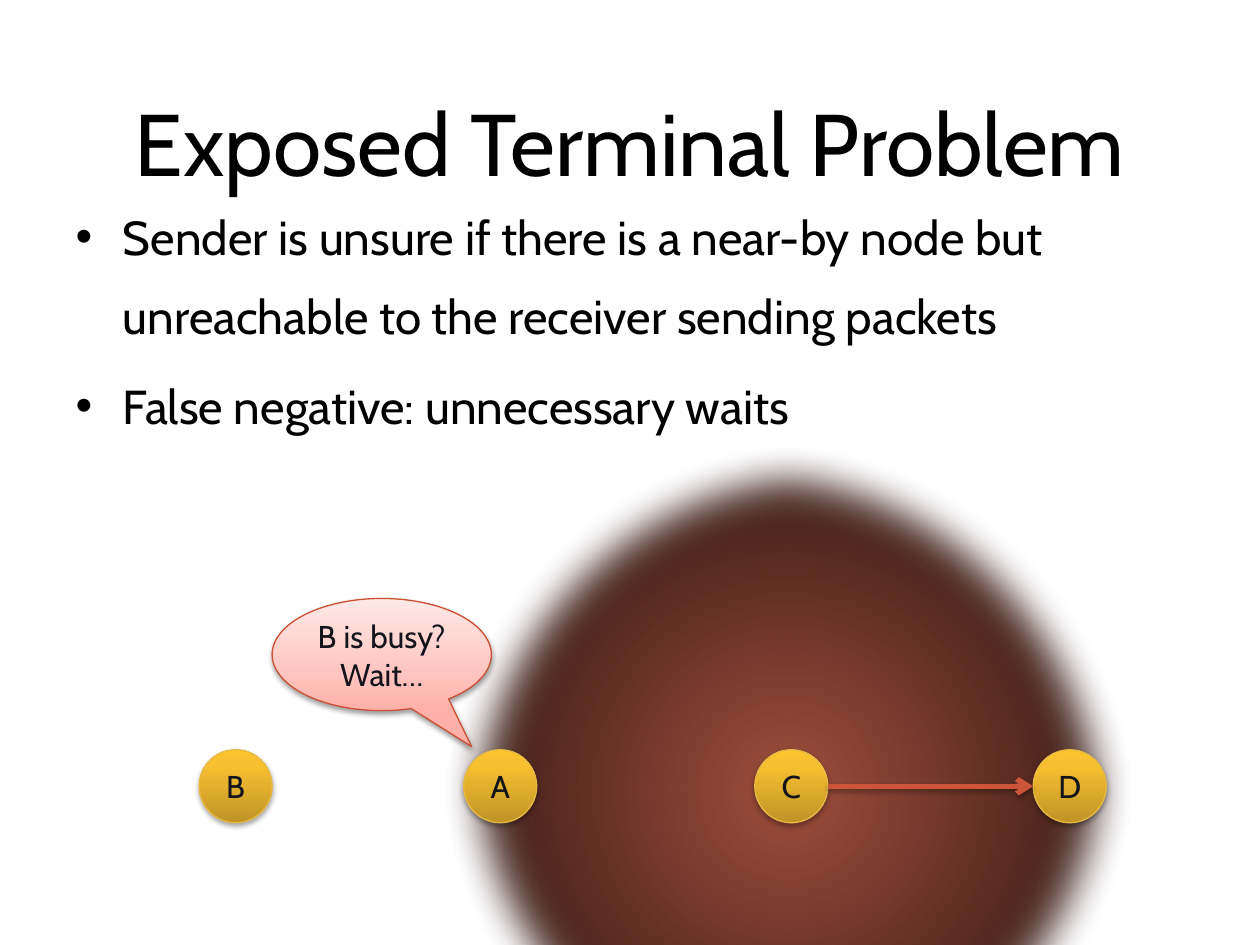
from dataclasses import dataclass

from lxml.etree import SubElement
from pptx import Presentation
from pptx.dml.color import RGBColor
from pptx.enum.shapes import MSO_CONNECTOR, MSO_SHAPE
from pptx.enum.text import MSO_ANCHOR, MSO_AUTO_SIZE, PP_ALIGN
from pptx.oxml import parse_xml
from pptx.oxml.ns import nsdecls, qn
from pptx.util import Emu, Inches, Pt


@dataclass(frozen=True)
class Stop:
    position: int  # percent
    color: str
    opacity: int = 100


@dataclass(frozen=True)
class Theme:
    font: str = "Cabin"
    text: str = "000000"
    label: str = "13141C"
    node_line: str = "E7BA45"
    callout_line: str = "CB5034"
    arrow: str = "CC5439"
    node_fill: tuple[Stop, ...] = (Stop(0, "BF9426"), Stop(80, "F8C031"), Stop(100, "FDC32D"))
    callout_fill: tuple[Stop, ...] = (Stop(0, "FFB0A8"), Stop(35, "FFC6C1"), Stop(100, "FFE9E7"))
    range_fill: tuple[Stop, ...] = (Stop(0, "9C3D28", 84), Stop(100, "000000"))
    title_size: float = 50
    body_size: float = 27.2
    label_size: float = 18


@dataclass(frozen=True)
class Node:
    label: str
    center_x: float


THEME = Theme()
NODE_SIZE = 0.58
NODE_ROW = 6.24
RANGE_WIDTH, RANGE_HEIGHT = 5.56, 5.58
NODES = {name: Node(name, x) for name, x in
         (("A", 3.97), ("C", 6.28), ("B", 1.87), ("D", 8.49))}
BULLETS = (
    "Sender is unsure if there is a near-by node but unreachable to the receiver sending packets",
    "False negative: unnecessary waits",
)


def place(part, left: float, top: float, width: float, height: float) -> None:
    part.left, part.top, part.width, part.height = map(Inches, (left, top, width, height))


def style_text(frame, size: float, color: str) -> None:
    for paragraph in frame.paragraphs:
        paragraph.font.name = THEME.font
        paragraph.font.size = Pt(size)
        paragraph.font.color.rgb = RGBColor.from_string(color)


def fill_gradient(shape, stops: tuple[Stop, ...], radial: bool = False) -> None:
    stop_xml = "".join(
        f'<a:gs pos="{s.position * 1000}"><a:srgbClr val="{s.color}">'
        f'<a:alpha val="{s.opacity * 1000}"/></a:srgbClr></a:gs>' for s in stops)
    direction = ('<a:path path="circle"><a:fillToRect l="50000" t="50000" r="50000" b="50000"/></a:path>'
                 if radial else '<a:lin ang="16200000" scaled="0"/>')
    gradient = parse_xml(f'<a:gradFill {nsdecls("a")} rotWithShape="1">'
                         f"<a:gsLst>{stop_xml}</a:gsLst>{direction}</a:gradFill>")
    shape._element.spPr.find(qn("a:prstGeom")).addnext(gradient)


def add_effects(part, opacity: int, distance: float, soft_edge: float = 0) -> None:
    """Cast a shadow straight down and, if asked, blur the outline."""
    soft = f'<a:softEdge rad="{Pt(soft_edge)}"/>' if soft_edge else ""
    part._element.spPr.append(parse_xml(
        f'<a:effectLst {nsdecls("a")}><a:outerShdw blurRad="{Pt(3.1)}" dist="{Pt(distance)}" '
        f'dir="5400000" rotWithShape="0"><a:srgbClr val="000000">'
        f'<a:alpha val="{opacity * 1000}"/></a:srgbClr></a:outerShdw>{soft}</a:effectLst>'))


def outline(part, color: str, width: float) -> None:
    part.line.color.rgb = RGBColor.from_string(color)
    part.line.width = Pt(width)


def write_label(shape, text: str) -> None:
    frame = shape.text_frame
    frame.text = text
    frame.vertical_anchor = MSO_ANCHOR.MIDDLE
    frame.margin_left = frame.margin_right = frame.margin_top = frame.margin_bottom = Emu(0)
    for paragraph in frame.paragraphs:
        paragraph.alignment = PP_ALIGN.CENTER
    style_text(frame, THEME.label_size, THEME.label)


def add_oval(slide, center_x: float, center_y: float, width: float, height: float):
    return slide.shapes.add_shape(
        MSO_SHAPE.OVAL, Inches(center_x - width / 2), Inches(center_y - height / 2),
        Inches(width), Inches(height))


def add_node(slide, node: Node) -> None:
    circle = add_oval(slide, node.center_x, NODE_ROW, NODE_SIZE, NODE_SIZE)
    fill_gradient(circle, THEME.node_fill)
    outline(circle, THEME.node_line, 0.75)
    add_effects(circle, 35, 1.8)
    write_label(circle, node.label)


def add_transmission(slide, sender: Node, receiver: Node) -> None:
    arrow = slide.shapes.add_connector(
        MSO_CONNECTOR.STRAIGHT,
        Inches(sender.center_x + NODE_SIZE / 2), Inches(NODE_ROW),
        Inches(receiver.center_x - NODE_SIZE / 2), Inches(NODE_ROW))
    outline(arrow, THEME.arrow, 3)
    SubElement(arrow.line._get_or_add_ln(), qn("a:tailEnd"), type="arrow")
    add_effects(arrow, 35, 1.8)


def add_callout(slide, text: str) -> None:
    callout = slide.shapes.add_shape(
        MSO_SHAPE.OVAL_CALLOUT, Inches(2.16), Inches(4.75), Inches(1.74), Inches(0.89))
    callout.adjustments[0], callout.adjustments[1] = 0.41, 0.82
    fill_gradient(callout, THEME.callout_fill)
    outline(callout, THEME.callout_line, 0.75)
    add_effects(callout, 38, 1.6)
    write_label(callout, text)


def add_heading_and_bullets(slide) -> None:
    title, body = slide.placeholders[0], slide.placeholders[1]
    place(title, 0.5, 0.5, 9, 1.25)
    title.text_frame.text = "Exposed Terminal Problem"
    title.text_frame.auto_size = MSO_AUTO_SIZE.NONE
    style_text(title.text_frame, THEME.title_size, THEME.text)

    place(body, 0.5, 1.75, 9, 2.11)
    frame = body.text_frame
    frame.text = "\n".join(BULLETS)
    frame.auto_size = MSO_AUTO_SIZE.NONE
    frame.vertical_anchor = MSO_ANCHOR.MIDDLE
    frame.margin_bottom = Inches(0.75)  # lifts the list clear of the diagram
    for paragraph in frame.paragraphs:
        paragraph.line_spacing = 1.4
    style_text(frame, THEME.body_size, THEME.text)


def main() -> None:
    deck = Presentation()
    deck.slide_width, deck.slide_height = Inches(10), Inches(7.5)
    slide = deck.slides.add_slide(deck.slide_layouts[1])
    add_heading_and_bullets(slide)

    # Radio range of the sending node C
    radio_range = add_oval(slide, 6.26, 6.27, RANGE_WIDTH, RANGE_HEIGHT)
    fill_gradient(radio_range, THEME.range_fill, radial=True)
    radio_range.line.fill.background()
    add_effects(radio_range, 38, 1.6, soft_edge=25)

    # Nodes, the transmission, and what A thinks
    for node in NODES.values():
        add_node(slide, node)
    add_transmission(slide, NODES["C"], NODES["D"])
    add_callout(slide, "B is busy?\nWait…")

    deck.save("out.pptx")


if __name__ == "__main__":
    main()
